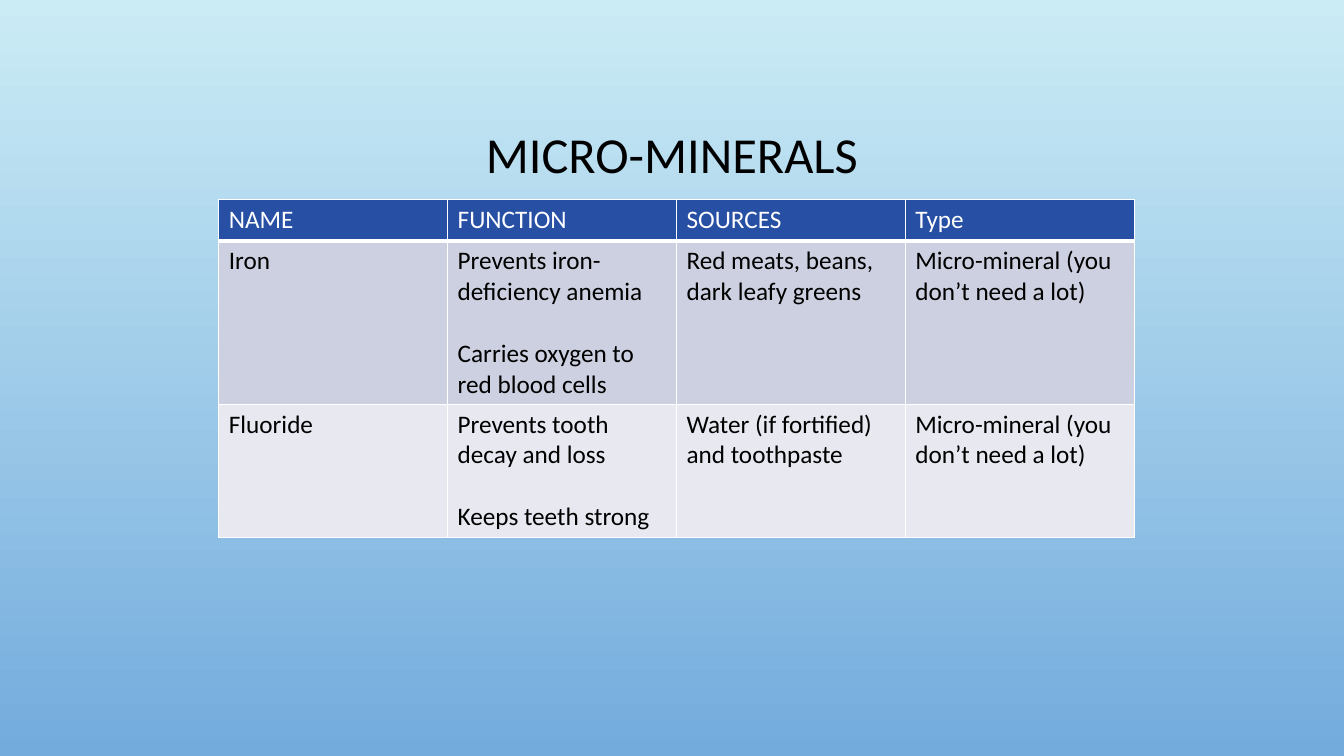
from lxml import etree
from pptx import Presentation
from pptx.dml.color import RGBColor
from pptx.enum.text import MSO_ANCHOR, PP_ALIGN
from pptx.oxml.ns import qn
from pptx.util import Inches, Pt

MIDDLE = MSO_ANCHOR.MIDDLE
LEFT, CENTER = PP_ALIGN.LEFT, PP_ALIGN.CENTER

# Content
TITLE = "MICRO-MINERALS"
TYPE = "Micro-mineral (you don’t need a lot)"
ROWS = [
    (["NAME"], ["FUNCTION"], ["SOURCES"], ["Type"]),
    (["Iron"],
     ["Prevents iron-deficiency anemia", "Carries oxygen to red blood cells"],
     ["Red meats, beans, dark leafy greens"], [TYPE]),
    (["Fluoride"],
     ["Prevents tooth decay and loss", "Keeps teeth strong"],
     ["Water (if fortified) and toothpaste"], [TYPE]),
]
HEIGHTS = [0.41, 1.62, 1.32]
FILLS = ["274FA4", "CDD0E0", "E8E9F0"]
INKS = ["FFFFFF", "000000", "000000"]
SKY = ["CBECF5", "73ABDD"]
COL = 2.27


def color(code):
    return RGBColor.from_string(code)


def write(frame, lines, size=18, ink="000000", align=LEFT, gap=0, spacing=1.0):
    frame.word_wrap = True
    for i, line in enumerate(lines):
        para = frame.add_paragraph() if i else frame.paragraphs[0]
        para.alignment = align
        para.line_spacing = spacing
        if i:
            para.space_before = Pt(gap)
        run = para.add_run()
        run.text = line
        font = run.font
        font.name, font.size, font.bold = "Calibri", Pt(size), False
        font.color.rgb = color(ink)


def border(cell, base):
    props = cell._tc.get_or_add_tcPr()
    for side, width in (("L", 1), ("R", 1), ("T", 1), ("B", base)):
        line = etree.SubElement(props, qn(f"a:ln{side}"), w=str(Pt(width)))
        fill = etree.SubElement(line, qn("a:solidFill"))
        etree.SubElement(fill, qn("a:srgbClr"), val="FFFFFF")


prs = Presentation()
prs.slide_width, prs.slide_height = Inches(13.33), Inches(7.5)
slide = prs.slides.add_slide(prs.slide_layouts[6])

# Background, light at the top
back = slide.background.fill
back.gradient()
back.gradient_angle = 270
for stop, place, code in zip(back.gradient_stops, (0, 1), SKY):
    stop.position = place
    stop.color.rgb = color(code)

# Title
box = slide.shapes.add_textbox(Inches(1), Inches(0.68), Inches(11.33), Inches(1.75))
box.text_frame.vertical_anchor = MIDDLE
write(box.text_frame, [TITLE], size=36, align=CENTER, spacing=0.9)

# Table
cols = len(ROWS[0])
table = slide.shapes.add_table(
    len(ROWS), cols, Inches(2.17), Inches(1.98),
    Inches(COL * cols), Inches(sum(HEIGHTS))).table
for col in table.columns:
    col.width = Inches(COL)
for r, row in enumerate(ROWS):
    table.rows[r].height = Inches(HEIGHTS[r])
    for c, lines in enumerate(row):
        cell = table.cell(r, c)
        border(cell, 1 if r else 3)
        cell.fill.solid()
        cell.fill.fore_color.rgb = color(FILLS[r])
        write(cell.text_frame, lines, ink=INKS[r], gap=22)

prs.save("out.pptx")
